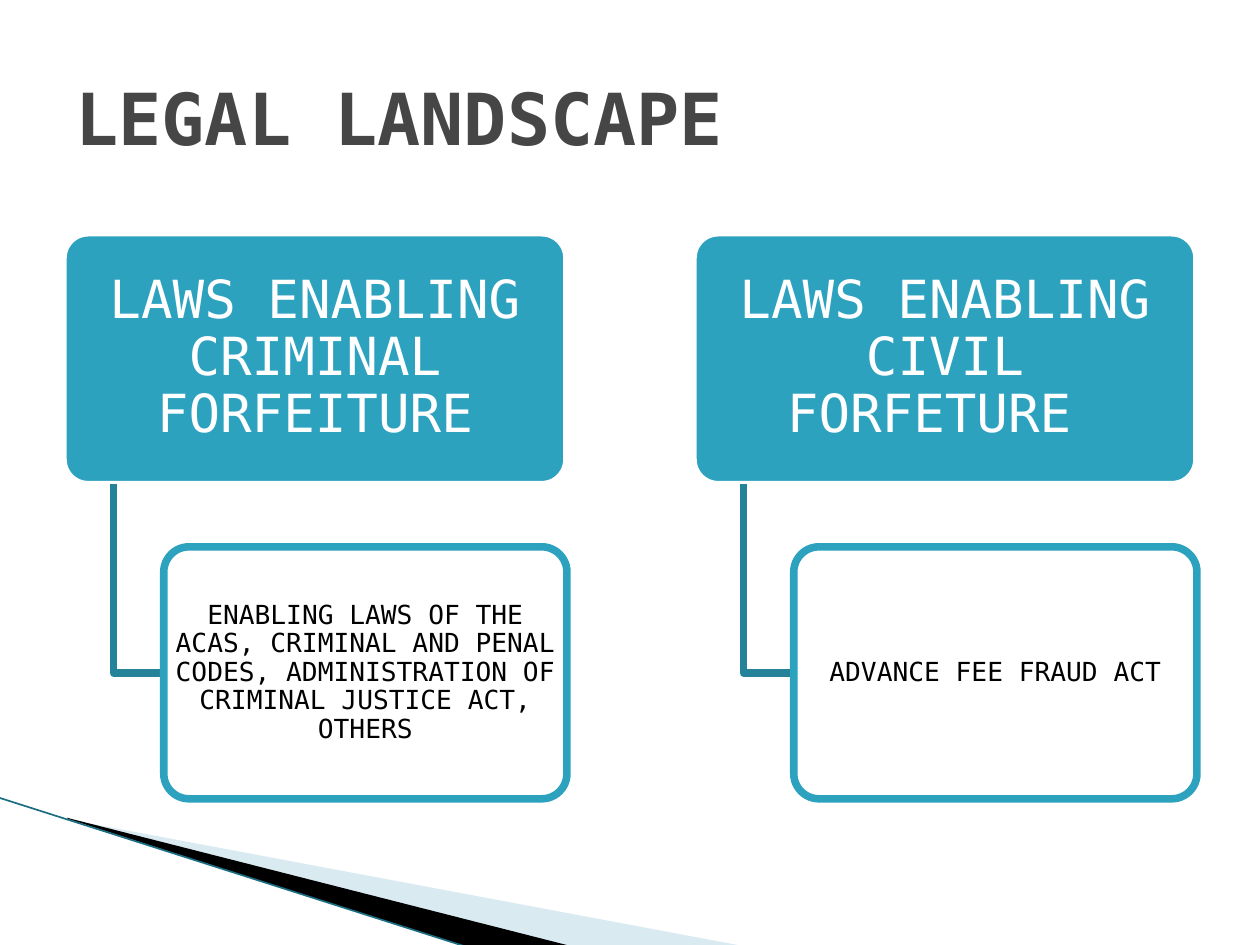
import pptx
import pptx.util
import pptx.dml.color
import pptx.enum.shapes
import pptx.enum.text
import pptx.oxml
import pptx.oxml.ns
from lxml import etree

Pt = pptx.util.Pt
FONT = "DejaVu Sans Mono"
ALIGN = pptx.enum.text.PP_ALIGN
BRANCHES = [
    ("LAWS ENABLING CRIMINAL FORFEITURE",
     "ENABLING LAWS OF THE ACAS, CRIMINAL AND PENAL CODES, "
     "ADMINISTRATION OF CRIMINAL JUSTICE ACT, OTHERS"),
    ("LAWS ENABLING CIVIL FORFETURE ", "ADVANCE FEE FRAUD ACT"),
]


def paint(color_format, color):
    """Set a solid fill or a font colour from a hex string."""
    if hasattr(color_format, "solid"):
        color_format.solid()
        color_format = color_format.fore_color
    else:
        color_format = color_format.color
    color_format.rgb = pptx.dml.color.RGBColor.from_string(color)


def set_opacity(shape, percent):
    """Make the solid fill of a shape partly transparent."""
    tag = pptx.oxml.ns.qn("a:srgbClr")
    fill_color = next(shape.fill._xPr.iter(tag))
    alpha = etree.SubElement(fill_color, pptx.oxml.ns.qn("a:alpha"))
    alpha.set("val", str(percent * 1000))


def style(shape, fill=None, line=None, width=4.33, opacity=100):
    """Give a shape its fill and outline, without a shadow."""
    shape.shadow.inherit = False
    if fill:
        paint(shape.fill, fill)
        if opacity < 100:
            set_opacity(shape, opacity)
    else:
        shape.fill.background()
    if line:
        paint(shape.line.fill, line)
        shape.line.width = Pt(width)
    else:
        shape.line.fill.background()


def write(shape, text, size, color, bold=False, align=ALIGN.CENTER,
          inset=(7.2, 3.6), spacing=1.0):
    """Write one vertically centred paragraph into a shape."""
    frame = shape.text_frame
    frame.word_wrap = True
    frame.vertical_anchor = pptx.enum.text.MSO_ANCHOR.MIDDLE
    frame.margin_left = frame.margin_right = Pt(inset[0])
    frame.margin_top = frame.margin_bottom = Pt(inset[1])
    paragraph = frame.paragraphs[0]
    paragraph.alignment = align
    paragraph.line_spacing = spacing
    run = paragraph.add_run()
    run.text = text
    run.font.name = FONT
    run.font.size = Pt(size)
    run.font.bold = bold
    paint(run.font, color)


def add_outline(slide, points, close=True, **look):
    """Draw a freeform through points given in points."""
    corners = [(Pt(x), Pt(y)) for x, y in points]
    builder = slide.shapes.build_freeform(*corners[0])
    builder.add_line_segments(corners[1:], close=close)
    style(builder.convert_to_shape(), **look)


def add_card(slide, left, top, width, height, **look):
    """Add a rounded rectangle with small corners."""
    card = slide.shapes.add_shape(
        pptx.enum.shapes.MSO_SHAPE.ROUNDED_RECTANGLE,
        Pt(left), Pt(top), Pt(width), Pt(height))
    card.adjustments[0] = 0.1
    style(card, **look)
    return card


def add_corner(slide, left, top, width, height):
    """Draw the sweeping wedges at the bottom left of the slide."""
    right, bottom = left + width, top + height
    add_outline(slide, [(39.6, 468.4), (428.4, bottom), (328.3, bottom), (39.6, 468)],
                fill="A0CBDC", opacity=40)
    add_outline(slide, [(38.2, 467.3), (329, bottom), (right, bottom), (38.9, 468)],
                fill="000000")
    edge = slide.shapes.add_connector(
        pptx.enum.shapes.MSO_CONNECTOR.STRAIGHT,
        Pt(left), Pt(top), Pt(right), Pt(bottom))
    paint(edge.line.fill, "1B6E82")
    edge.line.width = Pt(0.95)
    etree.SubElement(edge._element.spPr, pptx.oxml.ns.qn("a:effectLst"))


def add_branch(slide, left, top, width, heading, laws):
    """Draw a heading card with an elbow line down to its laws card."""
    height = 144
    indent = width / 10
    laws_left = left + 2 * indent
    laws_top = top + 1.25 * height - 0.5
    middle = laws_top + height / 2
    heading_card = add_card(slide, left, top, width, height,
                            fill="2DA2BF", line="FFFFFF")
    write(heading_card, heading, 30, "FFFFFF", inset=(4.5, 3), spacing=0.9)
    add_outline(slide, [(left + indent, top + height - 0.5), (left + indent, middle),
                        (laws_left, middle)], close=False, line="248299")
    laws_card = add_card(slide, laws_left, laws_top, width - 2 * indent, height,
                         fill="FFFFFF", opacity=90, line="2DA2BF")
    write(laws_card, laws, 15, "000000", inset=(2, 1.5), spacing=0.9)


def add_title(slide, left, top, width, height, text):
    """Add the slide title."""
    title = slide.shapes.add_textbox(Pt(left), Pt(top), Pt(width), Pt(height))
    write(title, text, 41, "464646", bold=True, align=ALIGN.LEFT)


def main():
    """Build the slide and save it."""
    deck = pptx.Presentation()
    deck.slide_width, deck.slide_height = Pt(720), Pt(540)
    slide = deck.slides.add_slide(deck.slide_layouts[6])
    add_corner(slide, -0.7, 455.8, 268, 85.5)
    for index, (heading, laws) in enumerate(BRANCHES):
        add_branch(slide, 36 + 360 * index, 133, 288, heading, laws)
    add_title(slide, 36, 21.6, 648, 90, "LEGAL LANDSCAPE")
    deck.save("out.pptx")


if __name__ == "__main__":
    main()
